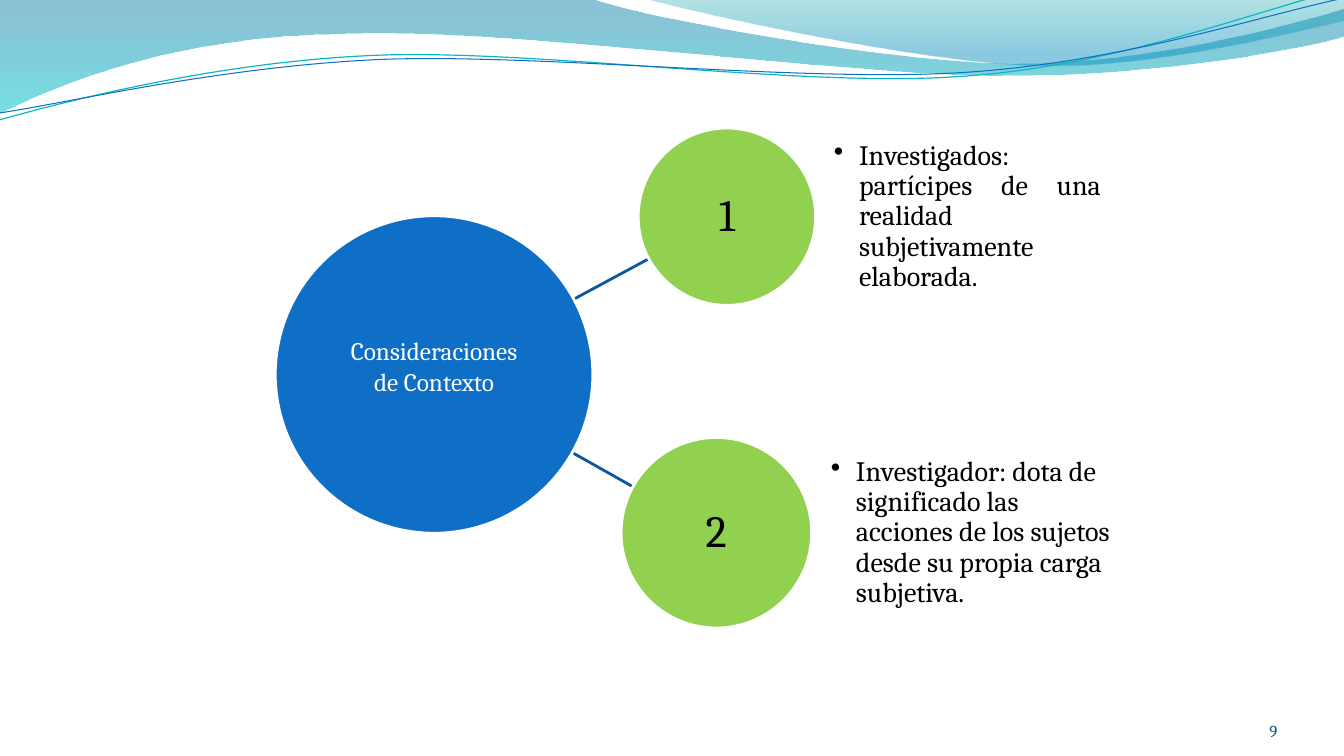
import lxml.etree
import pptx
import pptx.dml.color
import pptx.enum.shapes
import pptx.enum.text
import pptx.oxml
import pptx.oxml.ns
import pptx.util

Inches = pptx.util.Inches
qn = pptx.oxml.ns.qn
ALIGN = pptx.enum.text.PP_ALIGN
ANCHOR = pptx.enum.text.MSO_ANCHOR
FONT = "Cambria"

BANDS = [
    {"start": (0, 0),
     "segments": [(5.87, -0.01), (6.34, 0.17, 8.85, 0.63, 10.11, 0.63),
                  (11.38, 0.63, 12.78, 0.26, 13.33, 0.09), (13.35, 0.36),
                  (13.11, 0.44, 11.6, 0.76, 9.94, 0.75),
                  (8.29, 0.75, 5.09, 0.28, 3.43, 0.34),
                  (1.72, 0.36, 0.61, 0.83, -0.01, 1.13)],
     "stops": [(0, "0074A1", 45), (100, "00C6CF", 55)]},
    {"start": (6.39, -0.01),
     "segments": [(6.79, 0.11, 9.09, 0.62, 10.25, 0.65),
                  (11.41, 0.69, 12.82, 0.32, 13.33, 0.21), (13.33, 0)],
     "stops": [(0, "00A1A9", 30), (80, "008BBF", 45)]},
]
STRANDS = [
    {"start": (-0.01, 1.19),
     "segments": [(0.64, 1.01, 2.11, 0.62, 3.69, 0.55),
                  (5.27, 0.48, 7.9, 0.87, 9.5, 0.76),
                  (11.1, 0.66, 12.52, 0.08, 13.31, -0.1)],
     "color": "0AB8BF", "width": 0.85},
    {"start": (0, 1.12),
     "segments": [(0.63, 1.03, 2.18, 0.66, 3.78, 0.59),
                  (5.37, 0.53, 7.96, 0.82, 9.55, 0.72),
                  (11.15, 0.62, 12.55, 0.14, 13.34, -0.02)],
     "color": "0F6FC6", "width": 0.75},
]
SPOKES = [((5.41, 4.34), (6.28, 4.83)), ((5.41, 3.12), (6.43, 2.57))]
CONSIDERATIONS = [
    {"number": "1", "box": (6.33, 1.27, 4.59, 1.76), "gap": 0.18, "align": ALIGN.JUSTIFY,
     "detail": "Investigados: partícipes de una realidad subjetivamente elaborada."},
    {"number": "2", "box": (6.16, 4.34, 4.92, 1.89), "gap": 0.19, "align": ALIGN.LEFT,
     "detail": "Investigador: dota de significado las acciones de los sujetos "
               "desde su propia carga subjetiva."},
]


def rgb(color):
    """Turn a hex string into a colour."""
    return pptx.dml.color.RGBColor.from_string(color)


def assign(target, values):
    """Set each attribute named in a dict of format values."""
    for name, value in values.items():
        setattr(target, name, value)


def outline(shape, color, width):
    """Give a shape or connector a solid line."""
    shape.line.color.rgb = rgb(color)
    shape.line.width = pptx.util.Pt(width)


def write(shape, text, size, color, align, anchor, inset=(0, 0), spacing=None, bullet=False):
    """Write one formatted paragraph into a shape."""
    frame = shape.text_frame
    across, down = map(Inches, inset)
    assign(frame, {"word_wrap": True, "vertical_anchor": anchor, "margin_left": across,
                   "margin_right": across, "margin_top": down, "margin_bottom": down})
    paragraph = frame.paragraphs[0]
    if bullet:
        paragraph.level = 1
        properties = paragraph._p.get_or_add_pPr()
        properties.set("marL", str(Inches(0.25)))
        properties.set("indent", str(-Inches(0.25)))
        lxml.etree.SubElement(properties, qn("a:buChar")).set("char", "•")
    assign(paragraph, {"text": text, "alignment": align, "line_spacing": spacing})
    assign(paragraph.runs[0].font, {"name": FONT, "size": pptx.util.Pt(size)})
    paragraph.runs[0].font.color.rgb = rgb(color)


def add_text(slide, box, *args, **formats):
    """Add a text box at the given box."""
    label = slide.shapes.add_textbox(*map(Inches, box))
    write(label, *args, **formats)


def add_circle(slide, left, top, diameter, color):
    """Add a white-edged filled circle."""
    circle = slide.shapes.add_shape(pptx.enum.shapes.MSO_SHAPE.OVAL,
                                    *map(Inches, (left, top, diameter, diameter)))
    circle.shadow.inherit = False
    circle.fill.solid()
    circle.fill.fore_color.rgb = rgb(color)
    outline(circle, "FFFFFF", 2)
    return circle


def add_wave(slide, box, wave, close):
    """Build a wave of straight and cubic segments from the corner of its box."""
    def place(x, y):
        return Inches(box[0] + x), Inches(box[1] + y)

    builder = slide.shapes.build_freeform(*place(*wave["start"]))
    builder.add_line_segments([place(*segment[-2:]) for segment in wave["segments"]], close=close)
    shape = builder.convert_to_shape()
    shape.shadow.inherit = False
    sides = list(shape._element.iter(qn("a:lnTo")))
    for side, segment in zip(sides, wave["segments"]):
        if len(segment) == 2:
            continue
        curve = lxml.etree.Element(qn("a:cubicBezTo"))
        for pair in zip(segment[::2], segment[1::2]):
            x, y = place(*pair)
            point = lxml.etree.SubElement(curve, qn("a:pt"))
            point.set("x", str(x - shape.left))
            point.set("y", str(y - shape.top))
        side.getparent().replace(side, curve)
    return shape


def fill_gradient(shape, stops):
    """Fill a shape with a translucent gradient from top to bottom."""
    marks = "".join(
        f'<a:gs pos="{place * 1000}"><a:srgbClr val="{color}">'
        f'<a:alpha val="{opacity * 1000}"/></a:srgbClr></a:gs>'
        for place, color, opacity in stops)
    gradient = pptx.oxml.parse_xml(
        f'<a:gradFill {pptx.oxml.ns.nsdecls("a")} rotWithShape="1"><a:gsLst>{marks}</a:gsLst>'
        '<a:lin ang="5400000" scaled="0"/></a:gradFill>')
    shape.fill.background()
    empty = shape._element.spPr.find(qn("a:noFill"))
    shape._element.spPr.replace(empty, gradient)


def draw_header(slide, box):
    """Draw the wavy bands and strands across the top."""
    for wave in BANDS:
        band = add_wave(slide, box, wave, True)
        fill_gradient(band, wave["stops"])
        band.line.fill.background()
    for wave in STRANDS:
        strand = add_wave(slide, box, wave, False)
        strand.fill.background()
        outline(strand, wave["color"], wave["width"])


def draw_spokes(slide, box):
    """Draw the lines from the hub to the numbered circles."""
    for start, end in SPOKES:
        ends = [Inches(box[i % 2] + value) for i, value in enumerate(start + end)]
        spoke = slide.shapes.add_connector(pptx.enum.shapes.MSO_CONNECTOR.STRAIGHT, *ends)
        outline(spoke, "0C599F", 2)
        lxml.etree.SubElement(spoke._element.spPr, qn("a:effectLst"))


def draw_hub(slide, box):
    """Draw the central circle with its title."""
    left, top, width, height = box
    add_circle(slide, left, top, width, "0F6FC6")
    add_text(slide, (left + 0.55, top + 1.14, width - 1.1, 0.71), "Consideraciones de Contexto",
             18, "FFFFFF", ALIGN.CENTER, ANCHOR.TOP, inset=(0.1, 0.05))


def draw_consideration(slide, box, number, detail, gap, align):
    """Draw a numbered circle with its bulleted detail beside it."""
    left, top, width, height = box
    circle = add_circle(slide, left, top, height, "92D050")
    write(circle, number, 32, "000000", ALIGN.CENTER, ANCHOR.MIDDLE,
          inset=(0.02, 0.02), spacing=0.9)
    add_text(slide, (left + height + gap, top, width - height - gap, height), detail, 20,
             "000000", align, ANCHOR.MIDDLE, spacing=0.9, bullet=True)


def main():
    """Build and save the slide."""
    deck = pptx.Presentation()
    assign(deck, {"slide_width": Inches(13.33), "slide_height": Inches(7.5)})
    slide = deck.slides.add_slide(deck.slide_layouts[6])
    draw_header(slide, (0, 0, 13.33, 1.2))
    add_text(slide, (11.56, 6.95, 1.11, 0.4), "9", 12, "045D75", ALIGN.RIGHT, ANCHOR.BOTTOM)
    draw_spokes(slide, (0, 0, 13.33, 7.5))
    draw_hub(slide, (2.73, 2.14, 3.15, 3.15))
    for consideration in CONSIDERATIONS:
        draw_consideration(slide, **consideration)
    deck.save("out.pptx")


if __name__ == "__main__":
    main()
